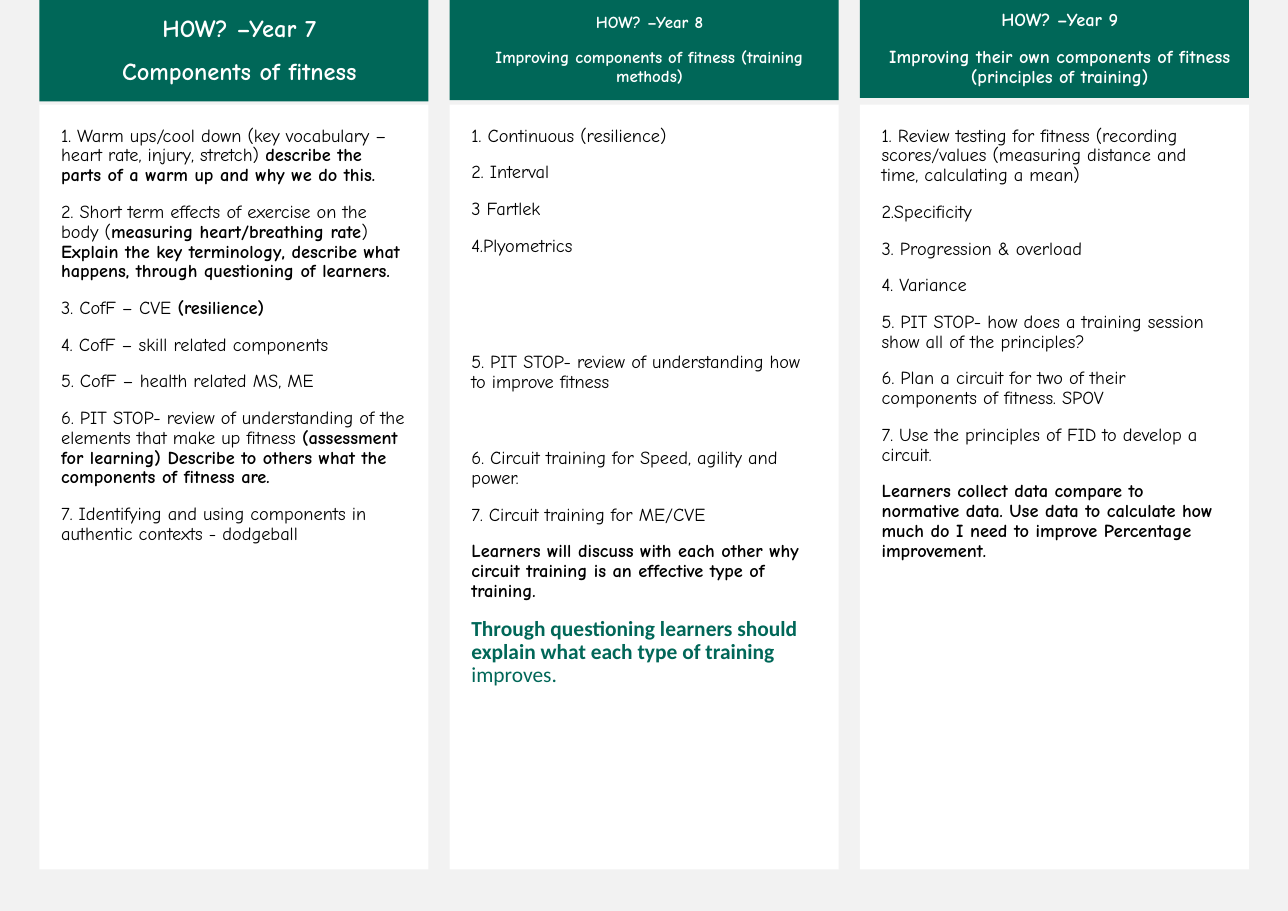
from dataclasses import dataclass

from pptx import Presentation
from pptx.dml.color import RGBColor
from pptx.enum.shapes import MSO_SHAPE
from pptx.enum.text import MSO_ANCHOR, PP_ALIGN
from pptx.util import Cm, Pt

COLOURS = {"page": "F2F2F2", "panel": "FFFFFF", "green": "006758",
           "text": "000000", "heading": "FFFFFF"}

BODY = {"name": "Comic Neue", "size": Pt(12), "colour": "text"}
CLOSING = {"name": "Calibri", "size": Pt(14), "colour": "green"}

HEADER_FRAME = {"margin_left": Cm(0.5), "margin_right": Cm(0.25),
                "margin_top": Cm(0.13), "margin_bottom": Cm(0.13),
                "vertical_anchor": MSO_ANCHOR.MIDDLE, "word_wrap": True}
PANEL_FRAME = {"margin_left": Cm(0.5), "margin_right": Cm(0.5),
               "margin_top": Cm(0.5), "margin_bottom": Cm(0.5),
               "vertical_anchor": MSO_ANCHOR.TOP, "word_wrap": True}

# Column grid
LEFT, PITCH, WIDTH = 0.91, 9.46, 8.97
PANEL_TOP, PANEL_HEIGHT = 2.41, 17.63


@dataclass
class Entry:
    """A paragraph whose spans alternate between regular and bold."""
    spans: tuple
    before: int = 11
    style: dict = None


def lesson(*spans, before=11, style=None):
    return Entry(spans, before, style or BODY)


@dataclass
class Year:
    headings: tuple
    heading_size: int
    header_height: float
    lessons: list


YEARS = [
    Year(("HOW? –Year 7", "Components of fitness"), 16, 2.34, [
        lesson("1. Warm ups/cool down (key vocabulary – heart rate, injury, stretch) ",
               "describe the parts of a warm up and why we do this."),
        lesson("2. Short term effects of exercise on the body (",
               "measuring heart/breathing rate", ") ",
               "Explain the key terminology, describe what happens, "
               "through questioning of learners."),
        lesson("3. CofF – CVE ", "(resilience)"),
        lesson("4. CofF – skill related components"),
        lesson("5. CofF – health related MS, ME"),
        lesson("6. PIT STOP- review of understanding of the elements that make up fitness ",
               "(assessment for learning) Describe to others what the "
               "components of fitness are."),
        lesson("7. Identifying and using components in authentic contexts - dodgeball"),
    ]),
    Year(("HOW? –Year 8", "Improving components of fitness (training methods)"), 11, 2.31, [
        lesson("1. Continuous (resilience)"),
        lesson("2. Interval"),
        lesson("3 Fartlek"),
        lesson("4.Plyometrics"),
        lesson("5. PIT STOP- review of understanding how to improve fitness", before=63),
        lesson("6. Circuit training for Speed, agility and power.", before=37),
        lesson("7. Circuit training for ME/CVE"),
        lesson("", "Learners will discuss with each other why circuit training "
               "is an effective type of training."),
        lesson("", "Through questioning learners should explain what each type of training",
               " improves.", style=CLOSING),
    ]),
    Year(("HOW? –Year 9",
          "Improving their own components of fitness (principles of training)"), 12, 2.26, [
        lesson("1. Review testing for fitness (recording scores/values "
               "(measuring distance and time, calculating a mean)"),
        lesson("2.Specificity"),
        lesson("3. Progression & overload"),
        lesson("4. Variance"),
        lesson("5. PIT STOP- how does a training session show all of the principles?"),
        lesson("6. Plan a circuit for two of their components of fitness. SPOV"),
        lesson("7. Use the principles of FID to develop a circuit."),
        lesson("", "Learners collect data compare to normative data. Use data to calculate "
               "how much do I need to improve Percentage improvement."),
    ]),
]


def colour(name):
    return RGBColor.from_string(COLOURS[name])


def apply_format(target, values):
    for name, value in values.items():
        setattr(target, name, value)


def add_box(page, left, top, height, fill, frame_format):
    box = page.shapes.add_shape(MSO_SHAPE.RECTANGLE, Cm(left), Cm(top), Cm(WIDTH), Cm(height))
    box.shadow.inherit = False
    box.fill.solid()
    box.fill.fore_color.rgb = colour(fill)
    box.line.fill.background()
    apply_format(box.text_frame, frame_format)
    return box


def write_entries(box, entries, alignment):
    frame = box.text_frame
    for index, entry in enumerate(entries):
        para = frame.add_paragraph() if index else frame.paragraphs[0]
        apply_format(para, {"alignment": alignment, "line_spacing": 0.9,
                            "space_before": Pt(entry.before if index else 0)})
        for position, text in enumerate(entry.spans):
            if text:
                span = para.add_run()
                span.text = text
                apply_format(span.font, {"name": entry.style["name"],
                                         "size": entry.style["size"],
                                         "bold": position % 2 == 1})
                span.font.color.rgb = colour(entry.style["colour"])


def add_header(page, left, year):
    box = add_box(page, left, 0, year.header_height, "green", HEADER_FRAME)
    style = {"name": "Comic Neue", "size": Pt(year.heading_size), "colour": "heading"}
    headings = [lesson("", text, style=style) for text in year.headings]
    write_entries(box, headings, PP_ALIGN.CENTER)


def add_panel(page, left, year):
    box = add_box(page, left, PANEL_TOP, PANEL_HEIGHT, "panel", PANEL_FRAME)
    write_entries(box, year.lessons, PP_ALIGN.LEFT)


def main():
    deck = Presentation()
    apply_format(deck, {"slide_width": Cm(29.7), "slide_height": Cm(21)})
    page = deck.slides.add_slide(deck.slide_layouts[6])
    page.background.fill.solid()
    page.background.fill.fore_color.rgb = colour("page")

    # One column per school year
    for index, year in enumerate(YEARS):
        left = LEFT + index * PITCH
        add_panel(page, left, year)
        add_header(page, left, year)

    deck.save("out.pptx")


if __name__ == "__main__":
    main()
